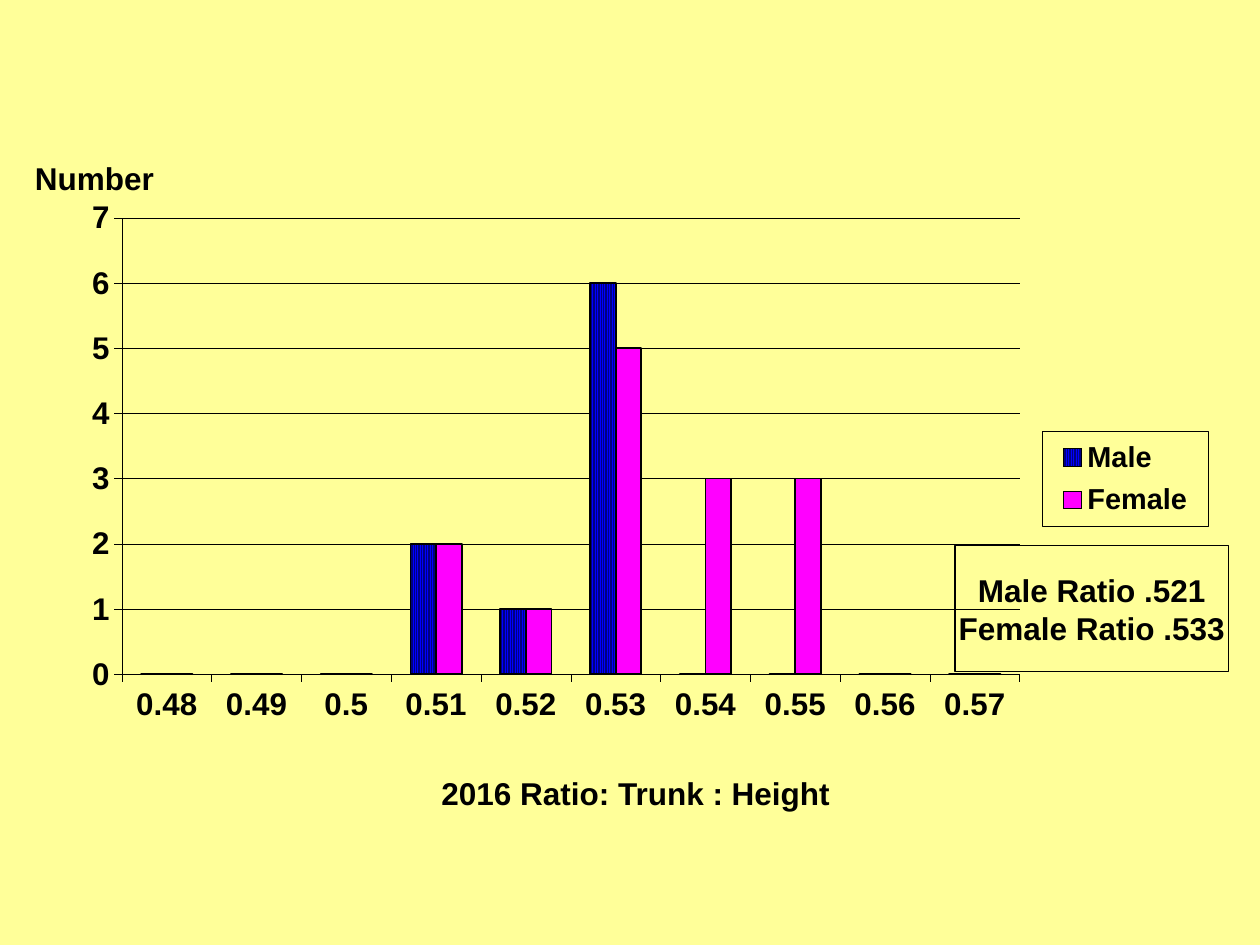
from lxml import etree
from pptx import Presentation
from pptx.chart.data import CategoryChartData
from pptx.dml.color import RGBColor
from pptx.enum.chart import XL_CHART_TYPE, XL_LEGEND_POSITION, XL_TICK_MARK, XL_TICK_LABEL_POSITION
from pptx.enum.dml import MSO_PATTERN
from pptx.enum.shapes import MSO_SHAPE
from pptx.enum.text import MSO_ANCHOR, PP_ALIGN
from pptx.oxml import parse_xml
from pptx.oxml.ns import nsdecls, qn
from pptx.util import Inches, Pt

COLORS = {
    "background": "FFFF99",
    "ink": "000000",
    "male": "0000FF",
    "male_stripe": "000080",
    "female": "FF00FF",
}
RGB = {name: RGBColor.from_string(value) for name, value in COLORS.items()}
FONT = {"name": "Arial", "bold": True}
CAPTION_FRAME = {"word_wrap": False, "vertical_anchor": MSO_ANCHOR.MIDDLE,
                 "margin_left": 0, "margin_right": 0}


def style_font(font, size):
    for attribute, value in {**FONT, "size": Pt(size)}.items():
        setattr(font, attribute, value)
    font.color.rgb = RGB["ink"]


def place(element, position, target, box):
    for old_layout in element.findall(qn("c:layout")):
        element.remove(old_layout)
    layout = parse_xml(f"<c:layout {nsdecls('c')}><c:manualLayout/></c:layout>")
    settings = {"layoutTarget": target, "xMode": "edge", "yMode": "edge",
                **dict(zip("xywh", box))}
    for tag, value in settings.items():
        if value is not None:
            etree.SubElement(layout[0], qn(f"c:{tag}")).set("val", str(value))
    element.insert(position, layout)


prs = Presentation()
prs.slide_width, prs.slide_height = Inches(10), Inches(7.5)
slide = prs.slides.add_slide(prs.slide_layouts[6])
slide.background.fill.solid()
slide.background.fill.fore_color.rgb = RGB["background"]

ratios = CategoryChartData()
ratios.categories = [str(hundredths / 100) for hundredths in range(48, 58)]
ratios.add_series("Male", [0, 0, 0, 2, 1, 6, 0, 0, 0, 0])
ratios.add_series("Female", [0, 0, 0, 2, 1, 5, 3, 3, 0, 0])
histogram = slide.shapes.add_chart(
    XL_CHART_TYPE.COLUMN_CLUSTERED,
    Inches(0.58), Inches(1.52), Inches(9.02), Inches(4.55), ratios,
).chart
histogram.has_title = False
style_font(histogram.font, 17.9)
columns = histogram.plots[0]
columns.gap_width = 150
columns.vary_by_categories = False
place(histogram.element.find(".//" + qn("c:plotArea")), 0, "inner",
      (0.043, 0.046, 0.79, 0.796))

male, female = columns.series
male.format.fill.patterned()
male.format.fill.pattern = MSO_PATTERN.LIGHT_VERTICAL
male.format.fill.fore_color.rgb = RGB["male"]
male.format.fill.back_color.rgb = RGB["male_stripe"]
female.format.fill.solid()
female.format.fill.fore_color.rgb = RGB["female"]
for sex in (male, female):
    sex.invert_if_negative = False
    sex.format.line.color.rgb = RGB["ink"]
    sex.format.line.width = Pt(1)

ratio_axis, number_axis = histogram.category_axis, histogram.value_axis
ratio_axis.tick_label_position = XL_TICK_LABEL_POSITION.LOW
for attribute, value in {"minimum_scale": 0, "maximum_scale": 7, "major_unit": 1,
                         "has_major_gridlines": True}.items():
    setattr(number_axis, attribute, value)
for axis in (ratio_axis, number_axis):
    axis.major_tick_mark = XL_TICK_MARK.OUTSIDE
    axis.minor_tick_mark = XL_TICK_MARK.NONE
    style_font(axis.tick_labels.font, 17.9)
for ruled in (ratio_axis, number_axis, number_axis.major_gridlines):
    ruled.format.line.color.rgb = RGB["ink"]
    ruled.format.line.width = Pt(0.25)

histogram.has_legend = True
legend = histogram.legend
legend.position = XL_LEGEND_POSITION.RIGHT
legend.include_in_layout = False
style_font(legend.font, 16.5)
legend_element = histogram.element.find(".//" + qn("c:legend"))
place(legend_element, 1, None, (0.853, 0.418, 0.146, 0.166))
legend_element.find(qn("c:overlay")).addnext(parse_xml(
    f'<c:spPr {nsdecls("c", "a")}><a:noFill/><a:ln w="{Pt(0.25)}"><a:solidFill>'
    f'<a:srgbClr val="{COLORS["ink"]}"/></a:solidFill></a:ln></c:spPr>'))

captions = [
    ((3.17, 6.08, 3.75, 0.42), ["2016 Ratio: Trunk : Height"], False),
    ((0.25, 1, 1, 0.83), ["Number"], False),
    ((7.58, 4.33, 2.17, 1), ["Male Ratio .521", "Female Ratio .533"], True),
]
for box, lines, framed in captions:
    bounds = [Inches(length) for length in box]
    if framed:
        caption = slide.shapes.add_shape(MSO_SHAPE.RECTANGLE, *bounds)
        caption.shadow.inherit = False
        caption.fill.background()
        caption.line.color.rgb = RGB["ink"]
        caption.line.width = Pt(0.75)
    else:
        caption = slide.shapes.add_textbox(*bounds)
    frame = caption.text_frame
    for attribute, value in CAPTION_FRAME.items():
        setattr(frame, attribute, value)
    frame.text = "\n".join(lines)
    for paragraph in frame.paragraphs:
        paragraph.alignment = PP_ALIGN.CENTER
        style_font(paragraph.runs[0].font, 18)

prs.save("out.pptx")
